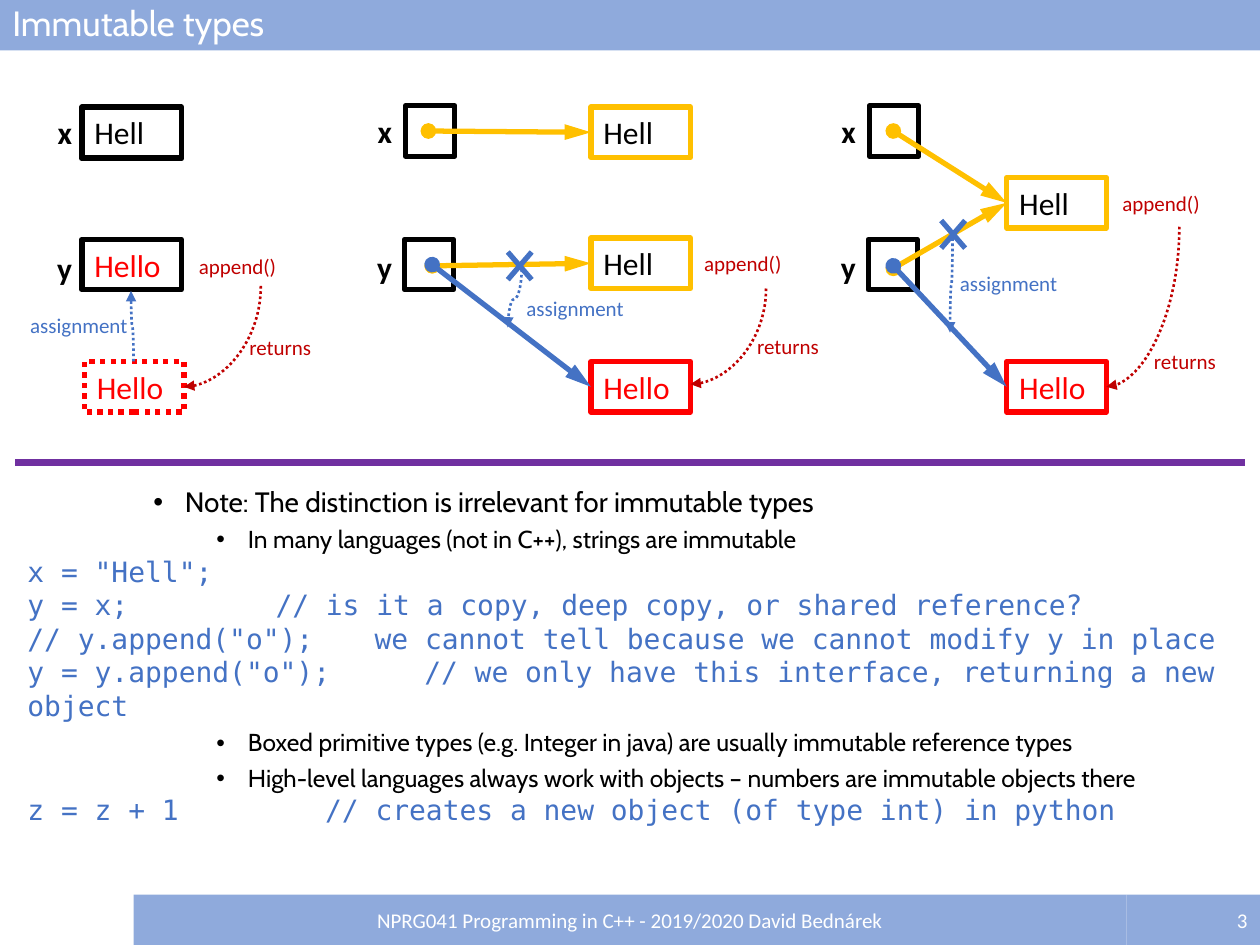
import pptx
import pptx.util
import pptx.dml.color
import pptx.enum.dml
import pptx.enum.shapes
import pptx.enum.text
import pptx.oxml
import pptx.oxml.ns

Inches, Pt = pptx.util.Inches, pptx.util.Pt
RGB = pptx.dml.color.RGBColor.from_string
DOT = pptx.enum.dml.MSO_LINE.ROUND_DOT
RECT = pptx.enum.shapes.MSO_SHAPE.RECTANGLE
CONN = pptx.enum.shapes.MSO_CONNECTOR
ALIGN, ANCHOR = pptx.enum.text.PP_ALIGN, pptx.enum.text.MSO_ANCHOR
NS = pptx.oxml.ns.nsdecls("a")
C = {"bar": "8FAADC", "blue": "4472C4", "gold": "FFC000", "red": "FF0000",
     "dark_red": "C00000", "purple": "7030A0", "black": "000000", "white": "FFFFFF"}
W, H = 0.79, 0.4  # size of a value box

prs = pptx.Presentation()
prs.slide_width, prs.slide_height = Inches(10), Inches(7.5)
s = prs.slides.add_slide(prs.slide_layouts[6])


def add_text(text, x, y, w=W, h=H, size=18, color="black", font="Calibri", bold=False,
             align=ALIGN.LEFT, anchor=ANCHOR.TOP, fill=None, line=None, dash=None):
    """Add a text box, or a rectangle when a fill or line is given."""
    box = [Inches(v) for v in (x, y, w, h)]
    if fill or line:
        sp = s.shapes.add_shape(RECT, *box)
        sp.shadow.inherit = False
        if fill:
            sp.fill.solid()
            sp.fill.fore_color.rgb = RGB(C[fill])
        else:
            sp.fill.background()
        if line:
            sp.line.color.rgb = RGB(C[line])
            sp.line.width = Pt(3)
            sp.line.dash_style = dash
        else:
            sp.line.fill.background()
    else:
        sp = s.shapes.add_textbox(*box)
    tf = sp.text_frame
    tf.word_wrap = True
    tf.vertical_anchor = anchor
    p = tf.paragraphs[0]
    p.alignment = align
    if text:
        r = p.add_run()
        r.text = text
        r.font.size, r.font.bold, r.font.name = Pt(size), bold, font
        r.font.color.rgb = RGB(C[color])
    return sp


def add_line(start, end, color, width=3, head=None, tail=None, curve=None, parent=s):
    """Add a line; a curve leaves its start vertically and bends to the left."""
    (x1, y1), (x2, y2) = start, end
    kind = CONN.CURVE if curve else CONN.STRAIGHT
    c = parent.shapes.add_connector(kind, *[Inches(v) for v in (x1, y1, x2, y2)])
    c.line.color.rgb = RGB(C[color])
    c.line.width = Pt(width)
    pr = c._element.spPr
    if curve:
        c.line.dash_style = DOT
        pr.find(pptx.oxml.ns.qn("a:prstGeom")).set("prst", curve)
        # The box is stored unrotated, around the same centre
        w, h = abs(y2 - y1), abs(x2 - x1)
        c.left, c.top = Inches((x1 + x2 - w) / 2), Inches((y1 + y2 - h) / 2)
        c.width, c.height = Inches(w), Inches(h)
        xfrm = pr.find(pptx.oxml.ns.qn("a:xfrm"))
        for flip in ("flipH", "flipV"):
            xfrm.attrib.pop(flip, None)
        xfrm.set("rot", str((90 if y2 > y1 else 270) * 60000))
        if y2 < y1:
            xfrm.set("flipV", "1")
    ln = c.line._get_or_add_ln()
    tail_length = "med" if curve else "lg"
    for tag, end_type, length in (("headEnd", head, "med"), ("tailEnd", tail, tail_length)):
        if end_type:
            ln.append(pptx.oxml.parse_xml(
                f'<a:{tag} {NS} type="{end_type}" w="med" len="{length}"/>'))
    pr.append(pptx.oxml.parse_xml(f"<a:effectLst {NS}/>"))


# Divider, title and footer bars
add_line((0.12, 3.67), (9.88, 3.67), "purple", 4)
title = add_text("Immutable types", 0, 0, 10, size=20, color="white", font="Cabin",
                 anchor=ANCHOR.MIDDLE, fill="bar")
title.text_frame.paragraphs[0].line_spacing = 0.9
for text, x, w, align in [
        ("3", 8.94, 1.06, ALIGN.RIGHT),
        ("NPRG041 Programming in C++ - 2019/2020 David Bednárek", 1.06, 7.88, ALIGN.CENTER)]:
    add_text(text, x, 7.1, w, size=12, color="white", align=align,
             anchor=ANCHOR.MIDDLE, fill="bar")

# Notes and code below the divider
body = [
    ("note", "Note: The distinction is irrelevant for immutable types"),
    ("sub", "In many languages (not in C++), strings are immutable"),
    ("code", 'x = "Hell";'),
    ("code", "y = x;\t\t\t// is it a copy, deep copy, or shared reference?"),
    ("code", '// y.append("o");\t\twe cannot tell because we cannot modify y in place'),
    ("code", 'y = y.append("o");\t\t// we only have this interface, returning a new object'),
    ("sub", "Boxed primitive types (e.g. Integer in java) are usually immutable reference types"),
    ("sub", "High-level languages always work with objects – numbers are immutable objects there"),
    ("code", "z = z + 1\t\t\t// creates a new object (of type int) in python"),
]
styles = {  # level, indent, size, font, colour
    "note": (2, 1.25, 16, "Cabin", "black"),
    "sub": (3, 1.75, 14, "Cabin", "black"),
    "code": (4, 0, 16, "DejaVu Sans Mono", "blue"),
}
tf = add_text("", 0.12, 3.83, 9.76, 3.23).text_frame
for i, (style, text) in enumerate(body):
    level, indent, size, font, color = styles[style]
    p = tf.add_paragraph() if i else tf.paragraphs[0]
    p.level = level
    p.space_before = Pt(5 if indent else 0)
    r = p.add_run()
    r.text = text
    r.font.size, r.font.name = Pt(size), font
    r.font.color.rgb = RGB(C[color])
    pPr = p._p.get_or_add_pPr()
    pPr.set("marL", str(Inches(indent)))
    pPr.set("indent", str(Inches(-0.25 if indent else 0)))
    if indent:
        p.line_spacing = 0.9
        pPr.append(pptx.oxml.parse_xml(f'<a:buFont {NS} typeface="Arial"/>'))
        pPr.append(pptx.oxml.parse_xml(f'<a:buChar {NS} char="•"/>'))
    else:
        pPr.set("defTabSz", str(Inches(1 / 2.54)))  # a tab stop every centimetre
        pPr.append(pptx.oxml.parse_xml(f"<a:buNone {NS}/>"))

# Variable names of the three models
for x, y in [(0.2, 0.85), (2.74, 0.84), (6.42, 0.84)]:
    for name, top in (("x", y), ("y", y + 1.08)):
        add_text(name, x, top, 0.47, bold=True, align=ALIGN.RIGHT)

# Variables that hold the value itself
for text, y, color in [("", 0.86, "black"), ("Hell", 0.85, "black"), ("Hello", 1.9, "red")]:
    add_text(text, 0.65, y, color=color, fill="white", line="black")

# Variables that hold a reference
for x in (3.21, 6.89):
    add_text("", x, 1.9, 0.39, line="black")
    add_text("", x + 0.01, 0.84, 0.39, line="black")

# Referenced values, and results of append()
for x, y in [(4.69, 0.85), (4.69, 1.89), (7.99, 1.41)]:
    add_text("Hell", x, y, line="gold")
for x, dash in [(0.67, DOT), (4.69, None), (7.99, None)]:
    add_text("Hello", x, 2.87, color="red", line="red", dash=dash)

# References: old ones in gold, reassigned ones in blue
for start, end, color in [
        ((3.4, 1.04), (4.69, 1.05), "gold"), ((3.43, 2.11), (4.69, 2.09), "gold"),
        ((7.09, 1.04), (7.99, 1.61), "gold"), ((7.09, 2.13), (7.99, 1.61), "gold"),
        ((3.43, 2.1), (4.69, 3.07), "blue"), ((7.09, 2.11), (7.99, 3.07), "blue")]:
    add_line(start, end, color, head="oval", tail="triangle")

# Crosses over the dropped references
for x, y in [(4.03, 2), (7.47, 1.75)]:
    cross = s.shapes.add_group_shape()
    for x1, x2 in ((x + 0.19, x), (x, x + 0.19)):
        add_line((x1, y), (x2, y + 0.22), "blue", parent=cross)

# Calls and what they return
for x, y in [(1.48, 1.96), (5.49, 1.94), (8.81, 1.46)]:
    add_text("append()", x, y, 1.19, 0.3, size=12, color="dark_red")
for x, y in [(1.88, 2.61), (5.91, 2.6), (9.06, 2.72)]:
    add_text("returns", x, y, 0.99, 0.3, size=12, color="dark_red")
for start, end in [((2.07, 2.27), (1.46, 3.07)), ((6.08, 2.29), (5.48, 3.05)),
                   ((9.36, 1.8), (8.78, 3.07))]:
    add_line(start, end, "dark_red", 1.5, tail="triangle", curve="curvedConnector2")

# Assignments
for x, y, align in [(0.12, 2.43, ALIGN.RIGHT), (4.08, 2.3, ALIGN.LEFT), (7.52, 2.1, ALIGN.LEFT)]:
    add_text("assignment", x, y, 0.99, 0.3, size=12, color="blue", align=align)
for start, end in [((1.06, 2.87), (1.04, 2.31)), ((4.14, 2.14), (4.03, 2.6)),
                   ((7.56, 1.89), (7.54, 2.64))]:
    add_line(start, end, "blue", 1.5, tail="triangle", curve="curvedConnector3")

prs.save("out.pptx")
